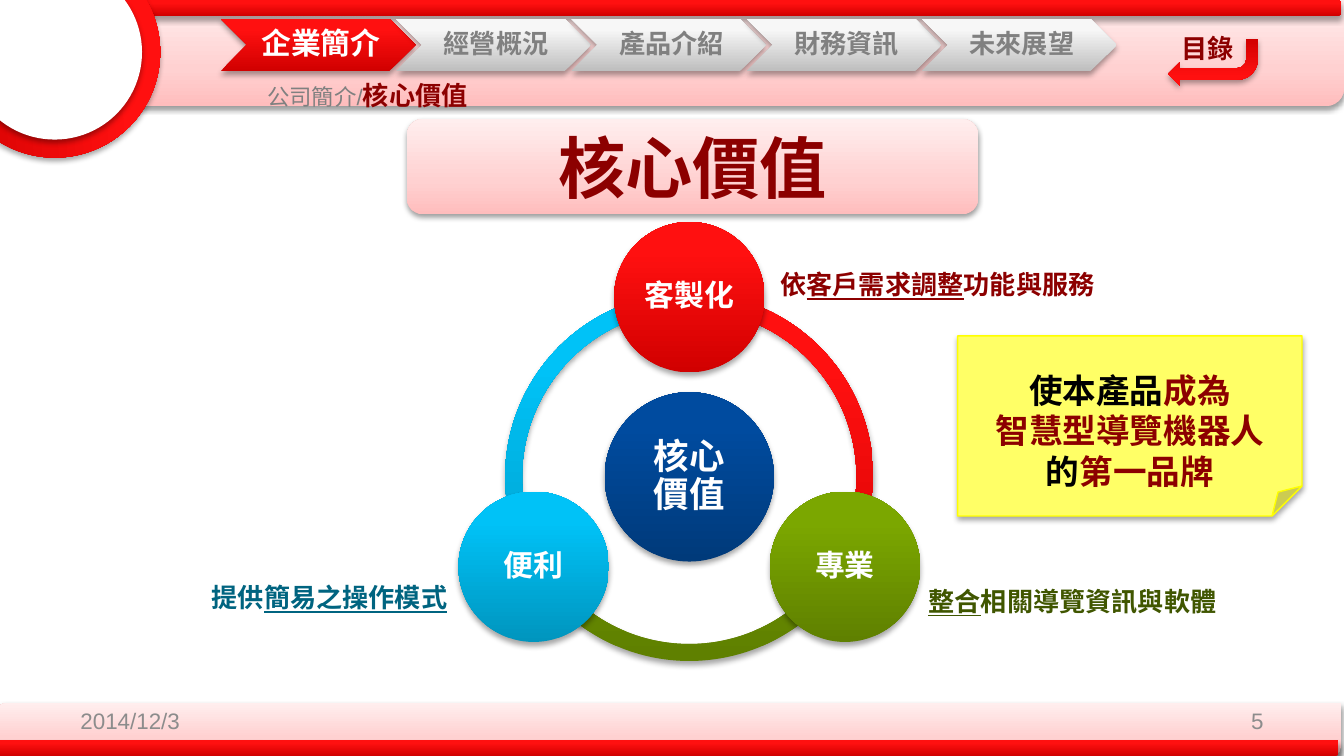
import math

from lxml import etree
from pptx import Presentation
from pptx.dml.color import RGBColor
from pptx.enum.shapes import MSO_SHAPE
from pptx.enum.text import MSO_ANCHOR, PP_ALIGN
from pptx.oxml.ns import qn
from pptx.util import Pt
from copy import deepcopy

ROUND_RECT = MSO_SHAPE.ROUNDED_RECTANGLE
DIAGONAL_RECT = MSO_SHAPE.ROUND_2_DIAG_RECTANGLE
ELLIPSE = MSO_SHAPE.OVAL
BENT_ARROW = MSO_SHAPE.BENT_ARROW
BLOCK_ARC = MSO_SHAPE.BLOCK_ARC
NOTE = MSO_SHAPE.FOLDED_CORNER
TOP, MIDDLE = MSO_ANCHOR.TOP, MSO_ANCHOR.MIDDLE
LEFT, CENTER, RIGHT = PP_ALIGN.LEFT, PP_ALIGN.CENTER, PP_ALIGN.RIGHT

FONT = "Arial"
DEFAULT_INSETS = (7.2, 3.6, 7.2, 3.6)
COLORS = {
    "white": "FFFFFF", "black": "000000", "grey": "808080", "footer": "8C8C8C",
    "dark red": "8C0000", "dark green": "405600", "dark blue": "006480",
    "note": "FFFF66", "note line": "FFFF00",
}
# Gradients run from bottom to top: position in percent, colour
GRADIENTS = {
    "pink": [(0, "FFBDBD"), (35, "FFD1D1"), (100, "FFEEEE")],
    "red": [(0, "D10000"), (80, "FF1010"), (100, "FF1212")],
    "silver": [(0, "BEBEBE"), (80, "F7F7F7"), (100, "F8F8F8")],
    "sky": [(0, "0095BE"), (80, "00C2F7"), (100, "00C3F8")],
    "green": [(0, "5F8000"), (80, "7BA700"), (100, "7CA700")],
    "navy": [(0, "003A7A"), (80, "004B9F"), (100, "004CA0")],
}


def rgb(name):
    return RGBColor.from_string(COLORS[name])


def paint(shape, fill_name):
    """Give a shape its fill, no outline and a soft shadow below."""
    if fill_name in GRADIENTS:
        shape.fill.gradient()
        stop_list = next(shape._element.spPr.iter(qn("a:gsLst")))
        stop_list.append(deepcopy(stop_list[0]))
        for stop, (position, color) in zip(shape.fill.gradient_stops, GRADIENTS[fill_name]):
            stop.position = position / 100
            stop.color.rgb = RGBColor.from_string(color)
        shape.fill.gradient_angle = 90
    else:
        shape.fill.solid()
        shape.fill.fore_color.rgb = rgb(fill_name)
    shape.line.fill.background()

    pink = fill_name == "pink"
    shape.shadow.inherit = False
    effects = shape._element.spPr.find(qn("a:effectLst"))
    shadow = etree.SubElement(
        effects, qn("a:outerShdw"), blurRad=str(Pt(3.1)),
        dist=str(Pt(1.6 if pink else 1.8)), dir="5400000", rotWithShape="0")
    color = etree.SubElement(shadow, qn("a:srgbClr"), val=COLORS["black"])
    etree.SubElement(color, qn("a:alpha"), val="38000" if pink else "35000")


def add_figure(slide, kind, left, top, width, height, fill_name):
    shape = slide.shapes.add_shape(kind, Pt(left), Pt(top), Pt(width), Pt(height))
    paint(shape, fill_name)
    return shape


def add_circle(slide, center_x, center_y, diameter, fill_name):
    return add_figure(slide, ELLIPSE, center_x - diameter / 2, center_y - diameter / 2,
                      diameter, diameter, fill_name)


def write(shape, paragraphs, align=LEFT, anchor=TOP, insets=DEFAULT_INSETS, spacing=None):
    """Fill a shape with paragraphs of (text, size, colour, bold, underline) runs."""
    frame = shape.text_frame
    frame.word_wrap = True
    frame.vertical_anchor = anchor
    frame.margin_left, frame.margin_top, frame.margin_right, frame.margin_bottom = map(Pt, insets)
    for index, runs in enumerate(paragraphs):
        paragraph = frame.add_paragraph() if index else frame.paragraphs[0]
        paragraph.alignment = align
        if spacing:
            paragraph.line_spacing = spacing
        for text, size, color, bold, underline in runs:
            for line_index, line in enumerate(text.split("\n")):
                if line_index:
                    paragraph.add_line_break()
                run = paragraph.add_run()
                run.text = line
                run.font.name = FONT
                run.font.size = Pt(size)
                run.font.bold = bold
                run.font.underline = underline
                run.font.color.rgb = rgb(color)


def add_label(slide, left, top, width, height, runs, align=LEFT, anchor=TOP):
    box = slide.shapes.add_textbox(Pt(left), Pt(top), Pt(width), Pt(height))
    write(box, [runs], align, anchor)


def add_chevron(slide, left, text, active):
    top, width, height = 10, 104.4, 28.1
    notch, right = height / 2, left + width
    points = [(right - notch, top), (right, top + notch), (right - notch, top + height),
              (left, top + height), (left + notch, top + notch)]
    builder = slide.shapes.build_freeform(Pt(left), Pt(top))
    builder.add_line_segments([(Pt(x), Pt(y)) for x, y in points], close=True)
    shape = builder.convert_to_shape()
    paint(shape, "red" if active else "silver")
    run = (text, 16, "white", True, False) if active else (text, 14, "grey", True, False)
    write(shape, [[run]], CENTER, MIDDLE, (19, 1.5, 16, 1.5), 0.9)


def add_frame(slide):
    """Bars at top and bottom, and the corner disc."""
    add_figure(slide, DIAGONAL_RECT, -1.5, 376.6, 720, 28.1, "pink")
    add_figure(slide, DIAGONAL_RECT, 0, 0, 720, 56.9, "pink")
    add_figure(slide, ROUND_RECT, 0, 0, 718.5, 8.6, "red")
    add_figure(slide, ROUND_RECT, -1.5, 396.4, 718.5, 8.6, "red")
    for diameter, fill_name in ((113, "red"), (93.6, "white")):
        add_circle(slide, 29.3, 28, diameter, fill_name).rotation = 86


def add_navigation(slide):
    for index, text in enumerate(["企業簡介", "經營概況", "產品介紹", "財務資訊", "未來展望"]):
        add_chevron(slide, 118.2 + 93.9 * index, text, index == 0)
    add_figure(slide, BENT_ARROW, 625.7, 20.7, 48.2, 25.2, "red").rotation = 180
    add_label(slide, 625.7, 13.7, 67, 24.2, [("目錄", 14, "dark red", True, False)])


def add_value_cycle(slide):
    """Ring of three arcs, the core disc and three discs on the ring."""
    center_x, center_y, ring, orbit = 369.3, 255.5, 197.3, 96.3
    # Arc ends in degrees, clockwise from the right
    for start, end, fill_name in ((150, 270, "sky"), (30, 150, "green"), (270, 30, "red")):
        arc = add_figure(slide, BLOCK_ARC, center_x - ring / 2, center_y - ring / 2,
                         ring, ring, fill_name)
        # Adjustments count 60000ths of a degree in units of 100000
        for index, value in enumerate((start * 0.6, end * 0.6, 0.046)):
            arc.adjustments[index] = value

    core = add_circle(slide, center_x, center_y, 90.7, "navy")
    write(core, [[("核心\n價值", 19, "white", True, False)]], CENTER, MIDDLE, (2,) * 4, 0.9)
    for angle, text, fill_name in ((270, "客製化", "red"), (30, "專業", "green"),
                                   (150, "便利", "sky")):
        radians = math.radians(angle)
        disc = add_circle(slide, center_x + orbit * math.cos(radians),
                          center_y + orbit * math.sin(radians), 80.6, fill_name)
        write(disc, [[(text, 16, "white", True, False)]], CENTER, MIDDLE, (1.5,) * 4, 0.9)


def add_value_notes(slide):
    add_label(slide, 411, 140.4, 272, 24.2, [
        ("依", 14, "dark red", True, False),
        ("客戶需求調整", 14, "dark red", True, True),
        ("功能與服務", 14, "dark red", True, False)])
    add_label(slide, 490.3, 310, 272, 24.2, [
        ("整合", 14, "dark green", True, True),
        ("相關導覽資訊與軟體", 14, "dark green", True, False)])
    add_label(slide, -25.2, 308, 272, 24.2, [
        ("提供", 14, "dark blue", True, False),
        ("簡易之操作模式", 14, "dark blue", True, True)], RIGHT)

    note = add_figure(slide, NOTE, 513, 180, 184.5, 96.5, "note")
    note.line.color.rgb = rgb("note line")
    note.line.width = Pt(0.75)
    write(note, [
        [("使本產品", 18, "black", True, False),
         ("成為\n智慧型導覽機器人", 18, "dark red", True, False)],
        [("的", 18, "black", True, False), ("第一品牌", 18, "dark red", True, False)],
    ], CENTER, MIDDLE, (7.2, 24.3, 7.2, 3.6))


def main():
    presentation = Presentation()
    presentation.slide_width, presentation.slide_height = Pt(720), Pt(405)
    slide = presentation.slides.add_slide(presentation.slide_layouts[6])

    add_frame(slide)
    add_navigation(slide)

    # Footer
    add_label(slide, 36, 375.4, 168, 21.6, [("2014/12/3", 12, "footer", False, False)],
              anchor=MIDDLE)
    add_label(slide, 516, 375.4, 168, 21.6, [("5", 12, "footer", False, False)], RIGHT, MIDDLE)

    # Title
    title = add_figure(slide, ROUND_RECT, 218, 63.8, 306, 51, "pink")
    write(title, [[("核心價值", 36, "dark red", True, False)]], CENTER, MIDDLE)

    add_value_cycle(slide)
    add_value_notes(slide)

    # Breadcrumb
    add_label(slide, 136, 38.9, 547, 24.2, [
        ("公司簡介/", 12, "grey", False, False), ("核心價值", 14, "dark red", True, False)])

    presentation.save("out.pptx")


if __name__ == "__main__":
    main()
